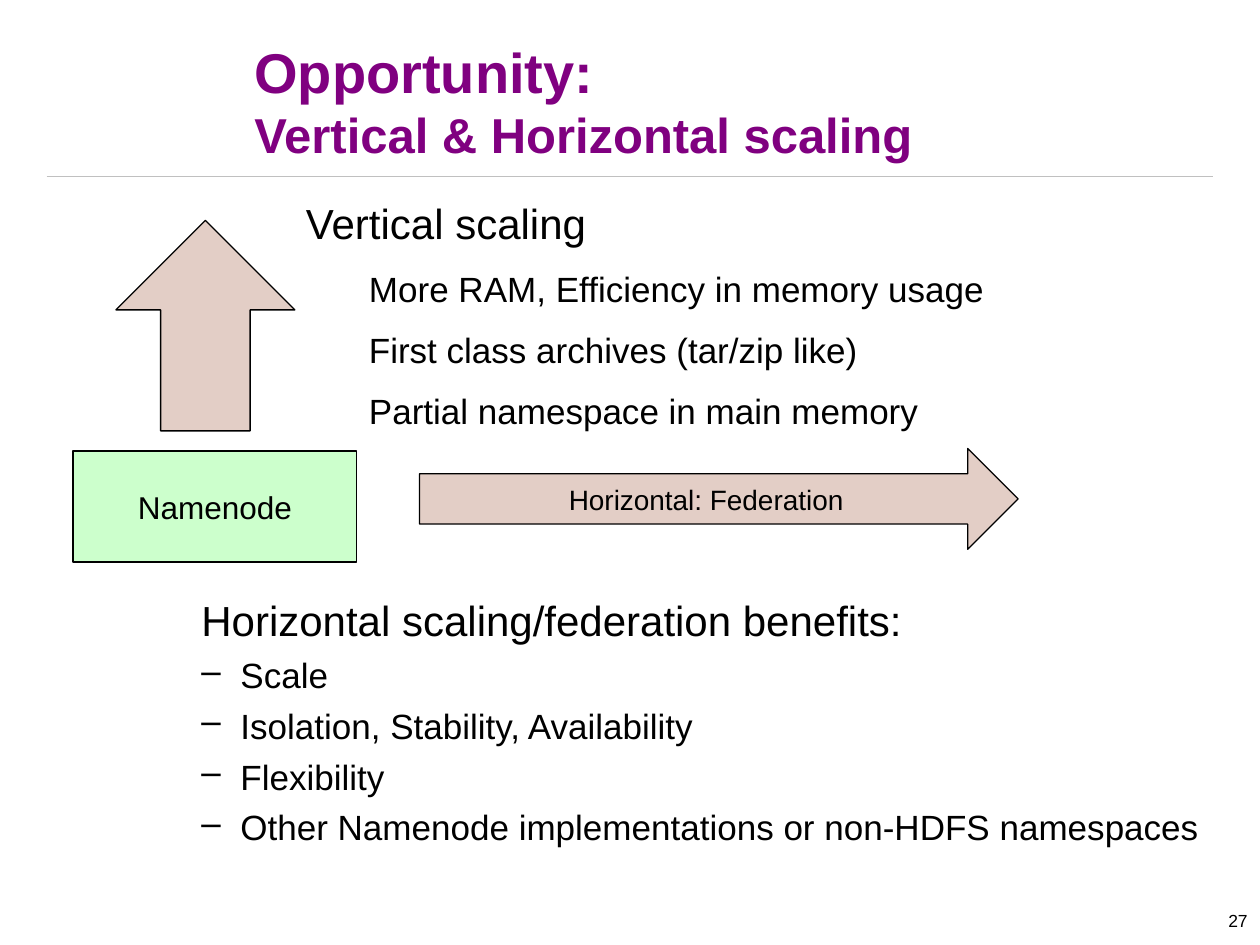
from lxml import etree
from pptx import Presentation
from pptx.dml.color import RGBColor
from pptx.enum import shapes, text
from pptx.oxml import ns
from pptx.util import Inches, Pt

PURPLE = RGBColor(0x80, 0x00, 0x80)
BLACK = RGBColor(0x00, 0x00, 0x00)
SILVER = RGBColor(0xC0, 0xC0, 0xC0)
BEIGE = RGBColor(0xE3, 0xCE, 0xC6)
MINT = RGBColor(0xCC, 0xFF, 0xCC)
FONT = "Arial"

TITLE = [("Opportunity:", 32), ("Vertical & Horizontal scaling", 28)]
VERTICAL = ("Vertical scaling", [
    "More RAM, Efficiency in memory usage",
    "First class archives (tar/zip like)",
    "Partial namespace in main memory",
])
HORIZONTAL = ("Horizontal scaling/federation benefits:", [
    "Scale",
    "Isolation, Stability, Availability",
    "Flexibility",
    "Other Namenode implementations or non-HDFS namespaces",
])
BLOCKS = [
    (shapes.MSO_SHAPE.UP_ARROW, (0.92, 1.75, 1.42, 1.67), BEIGE, "", 18),
    (shapes.MSO_SHAPE.RECTANGLE, (0.58, 3.58, 2.25, 0.88), MINT, "Namenode", 18),
    (shapes.MSO_SHAPE.RIGHT_ARROW, (3.33, 3.56, 4.75, 0.8), BEIGE,
     "Horizontal: Federation", 16),
]
PAGE_NUMBER = "27"


def style(font, size, color=BLACK, bold=False):
    font.name, font.size, font.bold = FONT, Pt(size), bold
    font.color.rgb = color


def add_frame(slide, box):
    frame = slide.shapes.add_textbox(*map(Inches, box)).text_frame
    frame.word_wrap = True
    return frame


def indent(paragraph, margin, hanging=0, bullet=None):
    properties = paragraph._p.get_or_add_pPr()
    properties.set("marL", str(Inches(margin)))
    properties.set("indent", str(Inches(-hanging)))
    if bullet:
        etree.SubElement(properties, ns.qn("a:buChar"), char=bullet)


def add_list(slide, box, content, gap, head_indent, item_indent):
    heading, items = content
    frame = add_frame(slide, box)
    head = frame.paragraphs[0]
    head.text = heading
    indent(head, *head_indent)
    style(head.font, 24)
    for item in items:
        paragraph = frame.add_paragraph()
        paragraph.text = item
        indent(paragraph, *item_indent)
        paragraph.space_before = Pt(gap)
        style(paragraph.font, 20)


def add_block(slide, preset, box, fill, label, size):
    block = slide.shapes.add_shape(preset, *map(Inches, box))
    block.shadow.inherit = False
    block.fill.solid()
    block.fill.fore_color.rgb = fill
    block.line.color.rgb = BLACK
    block.line.width = Pt(0.75)
    if label:
        frame = block.text_frame
        frame.vertical_anchor = text.MSO_ANCHOR.MIDDLE
        paragraph = frame.paragraphs[0]
        paragraph.text = label
        paragraph.alignment = text.PP_ALIGN.CENTER
        style(paragraph.font, size)


def main():
    deck = Presentation()
    deck.slide_width, deck.slide_height = Inches(10), Inches(7.5)
    slide = deck.slides.add_slide(deck.slide_layouts[6])

    rule = slide.shapes.add_connector(
        shapes.MSO_CONNECTOR.STRAIGHT,
        Inches(0.37), Inches(1.4), Inches(9.63), Inches(1.4))
    rule.line.color.rgb = SILVER
    rule.line.width = Pt(0.75)
    etree.SubElement(rule._element.spPr, ns.qn("a:effectLst"))

    title = add_frame(slide, (1.92, 0.17, 7.33, 1.25))
    title.vertical_anchor = text.MSO_ANCHOR.MIDDLE
    heading = title.paragraphs[0]
    for number, (line, size) in enumerate(TITLE):
        if number:
            heading.add_line_break()
        run = heading.add_run()
        run.text = line
        style(run.font, size, PURPLE, True)

    add_list(slide, (1, 4.67, 9, 1.03), HORIZONTAL, 5,
             (0.81, 0.31), (0.81, 0.31, "–"))
    for block in BLOCKS:
        add_block(slide, *block)
    add_list(slide, (2.33, 1.52, 6, 2.02), VERTICAL, 11, (0,), (0.5,))

    page = add_frame(slide, (7.92, 7.17, 2.08, 0.33)).paragraphs[0]
    page.text = PAGE_NUMBER
    page.alignment = text.PP_ALIGN.RIGHT
    style(page.font, 10)

    deck.save("out.pptx")


if __name__ == "__main__":
    main()
